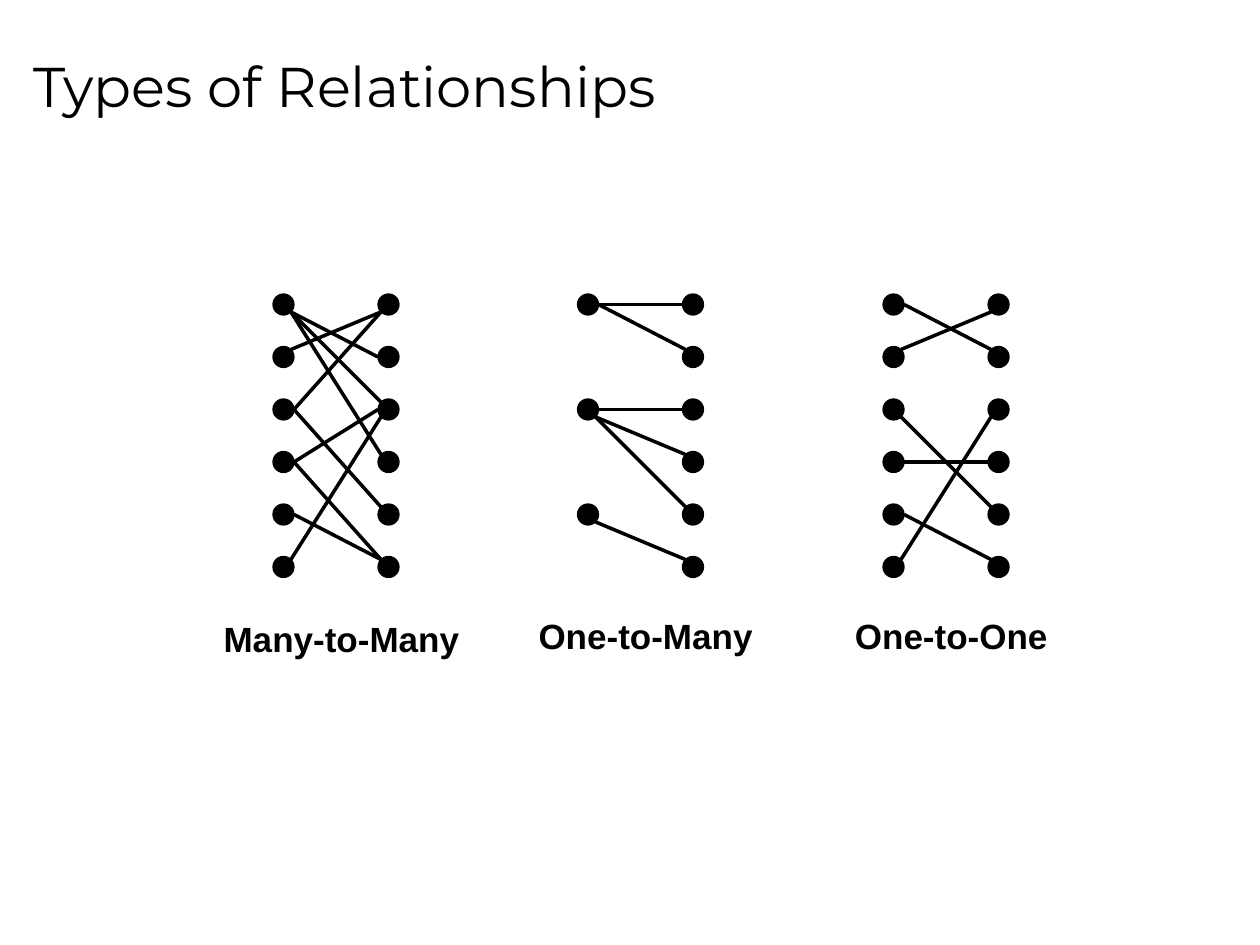
from math import sqrt

from lxml import etree
from pptx import Presentation
from pptx.dml.color import RGBColor
from pptx.enum.shapes import MSO_CONNECTOR, MSO_SHAPE
from pptx.enum.text import MSO_ANCHOR, MSO_AUTO_SIZE, PP_ALIGN
from pptx.oxml.ns import qn
from pptx.util import Pt

STRAIGHT = MSO_CONNECTOR.STRAIGHT
OVAL = MSO_SHAPE.OVAL
TOP, MIDDLE = MSO_ANCHOR.TOP, MSO_ANCHOR.MIDDLE
LEFT, CENTER = PP_ALIGN.LEFT, PP_ALIGN.CENTER
FIXED, GROW = MSO_AUTO_SIZE.NONE, MSO_AUTO_SIZE.SHAPE_TO_FIT_TEXT

COLORS = {"ink": "000000"}
TITLE = "Types of Relationships"

# Each link: left row, side of left dot, right row, side of right dot
DIAGRAMS = [
    {
        "label": "Many-to-Many", "label_box": (120.2, 349.2, 149.8, 31),
        "left": 156, "left_rows": range(6),
        "links": [
            (0, "SE", 2, "NW"), (0, "SE", 1, "W"), (0, "SE", 3, "NW"),
            (3, "E", 2, "W"), (5, "NE", 2, "SW"), (2, "E", 0, "SW"),
            (2, "E", 4, "NW"), (4, "E", 5, "NW"), (3, "E", 5, "NW"),
            (1, "NE", 0, "SW"),
        ],
    },
    {
        "label": "One-to-Many", "label_box": (300.2, 347.8, 137.5, 31),
        "left": 330, "left_rows": (0, 2, 4),
        "links": [
            (0, "E", 0, "W"), (0, "E", 1, "NW"), (2, "E", 2, "W"),
            (2, "SE", 3, "NW"), (2, "SE", 4, "NW"), (4, "SE", 5, "NW"),
        ],
    },
    {
        "label": "One-to-One", "label_box": (481, 347.8, 125.3, 31),
        "left": 504.6, "left_rows": range(6),
        "links": [
            (0, "E", 1, "NW"), (1, "NE", 0, "SW"), (4, "E", 5, "NW"),
            (3, "E", 3, "W"), (2, "SE", 4, "NW"), (5, "NE", 2, "SW"),
        ],
    },
]

# Dot grid
FIRST_ROW, ROW_STEP, COLUMN_STEP, ROWS = 168, 30, 60, 6
DIAMETER = 12
RADIUS = DIAMETER / 2
DIAGONAL = RADIUS / sqrt(2)
SIDES = {
    "E": (RADIUS, 0), "W": (-RADIUS, 0),
    "NE": (DIAGONAL, -DIAGONAL), "SE": (DIAGONAL, DIAGONAL),
    "NW": (-DIAGONAL, -DIAGONAL), "SW": (-DIAGONAL, DIAGONAL),
}


def color(name):
    return RGBColor.from_string(COLORS[name])


def add_text(slide, text, box, *, font, size, bold=False, align=LEFT,
             anchor=TOP, wrap=True, auto_size=FIXED):
    shape = slide.shapes.add_textbox(*map(Pt, box))
    frame = shape.text_frame
    frame.word_wrap = wrap
    frame.auto_size = auto_size
    frame.vertical_anchor = anchor
    paragraph = frame.paragraphs[0]
    paragraph.alignment = align
    run = paragraph.add_run()
    run.text = text
    run.font.name = font
    run.font.size = Pt(size)
    run.font.bold = bold
    run.font.color.rgb = color("ink")


def add_dot(slide, left, row):
    top = FIRST_ROW + row * ROW_STEP
    dot = slide.shapes.add_shape(OVAL, Pt(left), Pt(top), Pt(DIAMETER), Pt(DIAMETER))
    dot.shadow.inherit = False
    dot.fill.solid()
    dot.fill.fore_color.rgb = color("ink")
    dot.line.color.rgb = color("ink")
    dot.line.width = Pt(0.75)


def dot_point(left, row, side):
    shift_x, shift_y = SIDES[side]
    return (Pt(left + RADIUS + shift_x),
            Pt(FIRST_ROW + row * ROW_STEP + RADIUS + shift_y))


def add_link(slide, start, end):
    link = slide.shapes.add_connector(STRAIGHT, *start, *end)
    link.line.color.rgb = color("ink")
    link.line.width = Pt(2)
    etree.SubElement(link._element.spPr, qn("a:effectLst"))


def add_diagram(slide, diagram):
    left = diagram["left"]
    right = left + COLUMN_STEP
    add_text(slide, diagram["label"], diagram["label_box"], font="Arial", size=20,
             bold=True, align=CENTER, wrap=False, auto_size=GROW)
    for row in diagram["left_rows"]:
        add_dot(slide, left, row)
    for row in range(ROWS):
        add_dot(slide, right, row)
    for left_row, left_side, right_row, right_side in diagram["links"]:
        add_link(slide, dot_point(left, left_row, left_side),
                 dot_point(right, right_row, right_side))


def main():
    presentation = Presentation()
    presentation.slide_width, presentation.slide_height = Pt(720), Pt(540)
    slide = presentation.slides.add_slide(presentation.slide_layouts[6])

    # Title
    add_text(slide, TITLE, (12, 8.6, 684, 80.6), font="Montserrat", size=32,
             anchor=MIDDLE)

    # Relationship diagrams
    for diagram in DIAGRAMS:
        add_diagram(slide, diagram)

    presentation.save("out.pptx")


if __name__ == "__main__":
    main()
